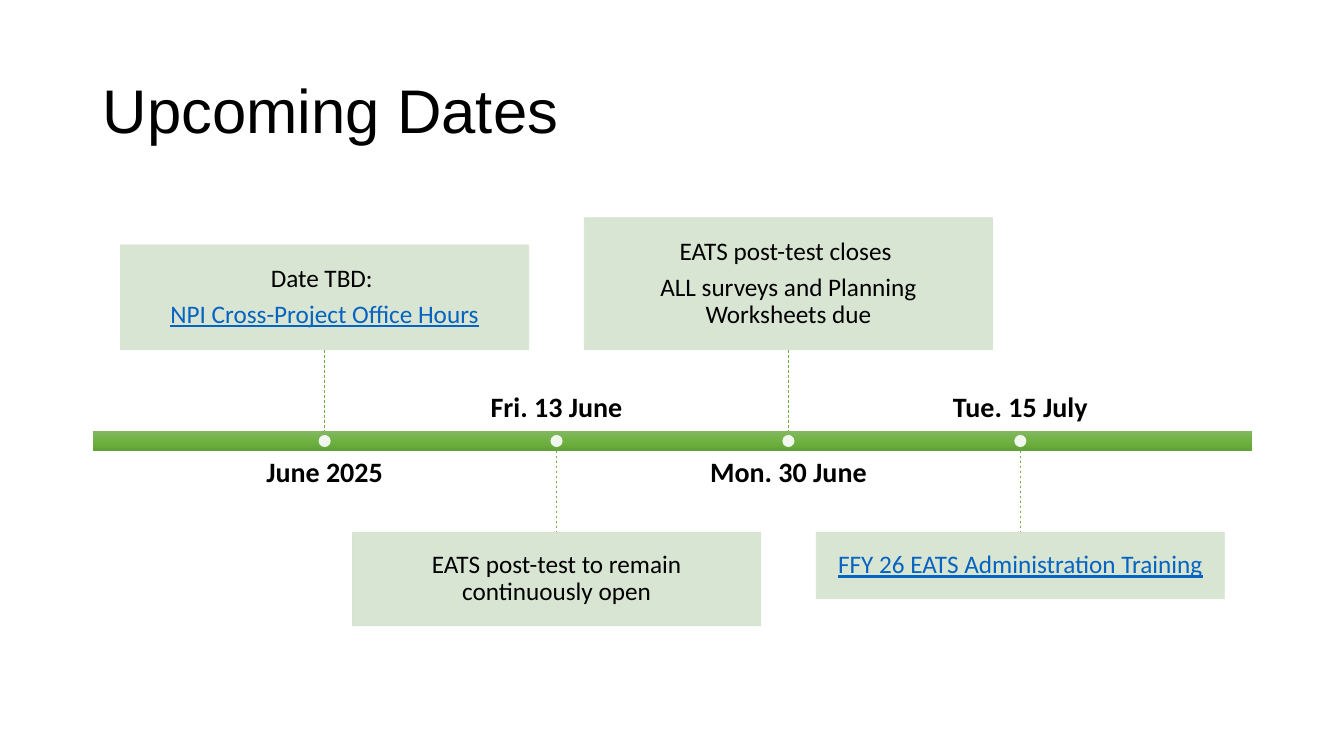
from copy import deepcopy
from dataclasses import dataclass

from lxml.etree import SubElement
from pptx import Presentation
from pptx.dml.color import RGBColor
from pptx.enum.dml import MSO_LINE
from pptx.enum.shapes import MSO_CONNECTOR, MSO_SHAPE
from pptx.enum.text import MSO_ANCHOR, PP_ALIGN
from pptx.oxml.ns import qn
from pptx.util import Inches, Pt


@dataclass(frozen=True)
class Theme:
    ink: str = "000000"
    link: str = "0563C1"
    card: str = "D5E3CF"
    stem: str = "70AD47"
    dot: str = "FFFFFF"
    bar: tuple = ("81B861", "6FB242", "62A336")
    head: str = "Arial"
    body: str = "Calibri"
    title: int = 44
    date: int = 20
    note: int = 18
    alpha: int = 90


@dataclass(frozen=True)
class Event:
    date: str
    lines: tuple
    high: float
    linked: bool = False


THEME = Theme()
BAR = (0.92, 4.28, 11.5, 0.19)
EVENTS = (
    Event("June 2025", ("Date TBD: ", "NPI Cross-Project Office Hours"), 1.04, True),
    Event("Fri. 13 June", ("EATS post-test to remain continuously open",), 0.93),
    Event("Mon. 30 June", ("EATS post-test closes ",
                           "ALL surveys and Planning Worksheets due"), 1.31),
    Event("Tue. 15 July", ("FFY 26 EATS Administration Training",), 0.66, True),
)


def rgb(code):
    return RGBColor.from_string(code)


def inches(*values):
    return [Inches(value) for value in values]


def fade(shape):
    """Make every solid colour of the shape slightly see-through."""
    for color in shape._element.spPr.iter(qn("a:srgbClr")):
        SubElement(color, qn("a:alpha"), val=str(THEME.alpha * 1000))


def add_block(slide, kind, box, fill=None, line=None):
    shape = slide.shapes.add_shape(kind, *inches(*box))
    shape.shadow.inherit = False
    if fill:
        shape.fill.solid()
        shape.fill.fore_color.rgb = rgb(fill)
    if line:
        shape.line.color.rgb = rgb(line)
        shape.line.width = Pt(0.5)
    else:
        shape.line.fill.background()
    fade(shape)
    return shape


def write(shape, lines, size, inset, anchor, bold=False):
    frame = shape.text_frame
    frame.text = "\n".join(lines)
    frame.word_wrap = True
    frame.vertical_anchor = anchor
    frame.margin_left = frame.margin_right = Inches(inset)
    frame.margin_top = frame.margin_bottom = Inches(inset)
    for index, para in enumerate(frame.paragraphs):
        para.alignment = PP_ALIGN.CENTER
        para.line_spacing = 0.9
        if index:
            para.space_before = Pt(0.35 * size)
        font = para.runs[0].font
        font.name, font.size, font.bold = THEME.body, Pt(size), bold
        font.color.rgb = rgb(THEME.ink)
    return frame


def add_title(slide, box, text):
    title = slide.shapes.title
    title.left, title.top, title.width, title.height = inches(*box)
    frame = title.text_frame
    frame.text = text
    frame.vertical_anchor = MSO_ANCHOR.MIDDLE
    para = frame.paragraphs[0]
    para.alignment = PP_ALIGN.LEFT
    para.line_spacing = 0.9
    font = para.runs[0].font
    font.name, font.size = THEME.head, Pt(THEME.title)
    font.color.rgb = rgb(THEME.ink)


def add_bar(slide, box):
    bar = add_block(slide, MSO_SHAPE.RECTANGLE, box)
    bar.fill.gradient()
    bar.fill.gradient_angle = 270
    first = bar._element.spPr.find(".//" + qn("a:gs"))
    first.addnext(deepcopy(first))
    for index, (stop, code) in enumerate(zip(bar.fill.gradient_stops, THEME.bar)):
        stop.color.rgb = rgb(code)
        stop.position = index / 2


def add_stem(slide, x, top, end):
    stem = slide.shapes.add_connector(MSO_CONNECTOR.STRAIGHT, *inches(x, top, x, end))
    stem.line.color.rgb = rgb(THEME.stem)
    stem.line.width = Pt(0.5)
    stem.line.dash_style = MSO_LINE.DASH
    SubElement(stem._element.spPr, qn("a:effectLst"))


def add_event(slide, event, x, col, bar, above):
    """Place one card, its stem, dot and date around x; the date sits opposite the card."""
    _, top, _, thick = bar
    base = top + thick
    reach, gap, tall, dot = 0.81, 0.08, 0.54, 0.12
    wide, span = 1.76 * col, 1.6 * col
    if above:
        y, ends = top - reach - event.high, (top - reach, top)
        label, anchor = base + gap, MSO_ANCHOR.TOP
    else:
        y, ends = base + reach, (base, base + reach)
        label, anchor = top - gap - tall, MSO_ANCHOR.BOTTOM

    card = add_block(slide, MSO_SHAPE.RECTANGLE, (x - wide / 2, y, wide, event.high),
                     THEME.card, THEME.card)
    frame = write(card, event.lines, THEME.note, 0.19, MSO_ANCHOR.MIDDLE)
    if event.linked:
        font = frame.paragraphs[-1].runs[0].font
        font.color.rgb = rgb(THEME.link)
        font.underline = True

    add_stem(slide, x, *ends)
    date = slide.shapes.add_textbox(*inches(x - span / 2, label, span, tall))
    write(date, (event.date,), THEME.date, 0, anchor, bold=True)
    add_block(slide, MSO_SHAPE.OVAL,
              (x - dot / 2, top + (thick - dot) / 2, dot, dot), THEME.dot)


def add_timeline(slide, bar, events):
    add_bar(slide, bar)
    col = bar[2] / (len(events) + 1)
    for index, event in enumerate(events):
        add_event(slide, event, bar[0] + (index + 1) * col, col, bar, index % 2 == 0)


def main():
    deck = Presentation()
    deck.slide_width, deck.slide_height = inches(13.33, 7.5)
    slide = deck.slides.add_slide(deck.slide_layouts[5])
    add_title(slide, (BAR[0], 0.4, BAR[2], 1.45), "Upcoming Dates")
    add_timeline(slide, BAR, EVENTS)
    deck.save("out.pptx")


if __name__ == "__main__":
    main()
